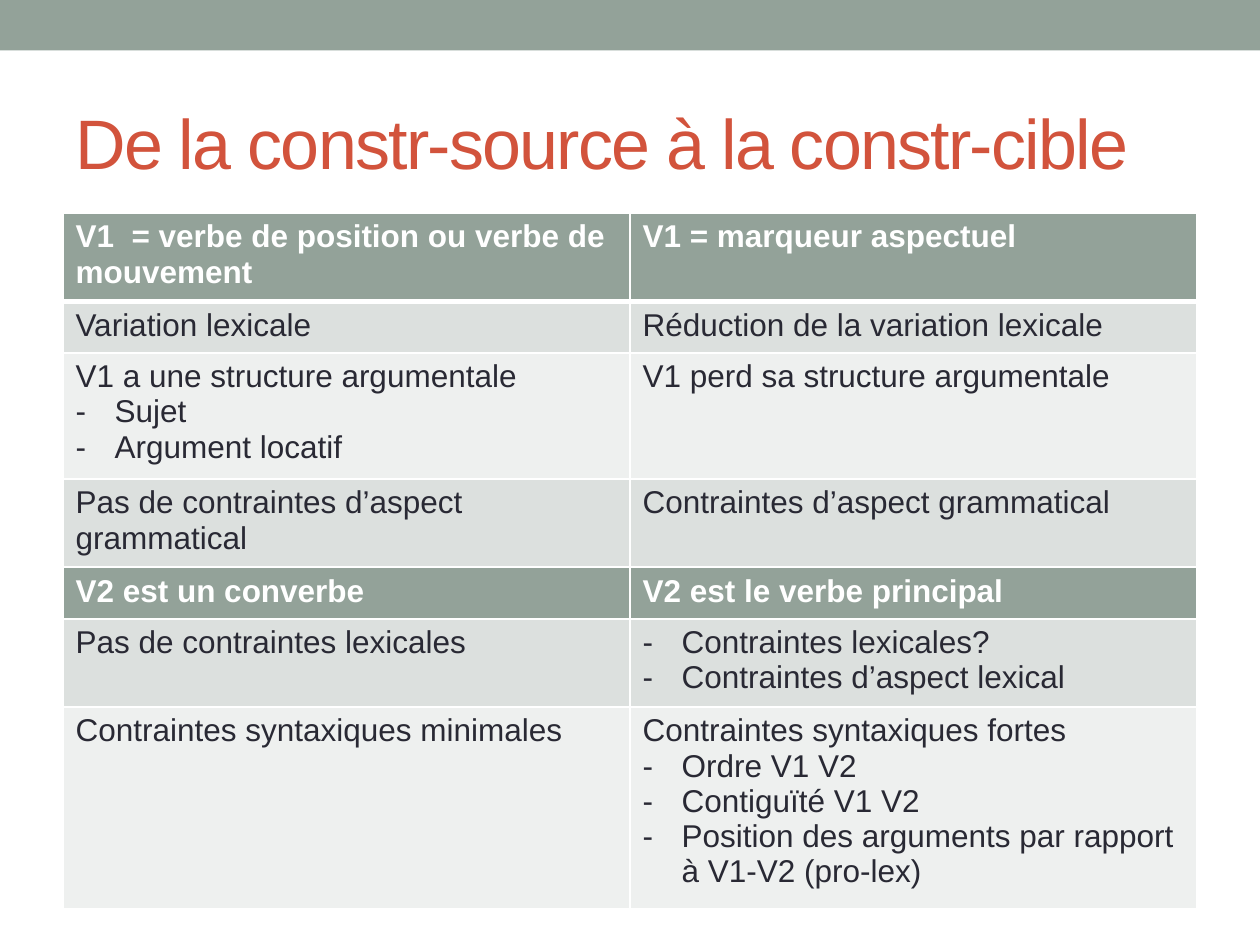
from dataclasses import dataclass

from lxml.etree import SubElement as Sub
from pptx import Presentation
from pptx.dml.color import RGBColor as Rgb
from pptx.enum.shapes import MSO_SHAPE as Shape
from pptx.enum.text import MSO_ANCHOR as Anchor
from pptx.oxml.ns import qn
from pptx.util import Inches, Pt

SAGE = Rgb(0x93, 0xA2, 0x99)
DARK = Rgb(0xDC, 0xE0, 0xDE)
PALE = Rgb(0xEE, 0xF0, 0xEF)
RUST = Rgb(0xD2, 0x53, 0x3C)
INK = Rgb(0x29, 0x29, 0x34)
WHITE = Rgb(0xFF, 0xFF, 0xFF)
FONT = "Arial"
DASH = "- "
WIDE, HIGH = Inches(10), Inches(7.5)
EDGE = WIDE // 20
SPAN = WIDE - 2 * EDGE


@dataclass
class Row:
    high: float
    fill: Rgb
    left: list[str]
    right: list[str]

    @property
    def head(self) -> bool:
        return self.fill == SAGE


ROWS = [
    Row(0.66, SAGE, ["V1  = verbe de position ou verbe de mouvement"],
        ["V1 = marqueur aspectuel"]),
    Row(0.41, DARK, ["Variation lexicale"],
        ["Réduction de la variation lexicale"]),
    Row(0.94, PALE,
        ["V1 a une structure argumentale", "- Sujet", "- Argument locatif"],
        ["V1 perd sa structure argumentale"]),
    Row(0.66, DARK, ["Pas de contraintes d’aspect grammatical"],
        ["Contraintes d’aspect grammatical"]),
    Row(0.41, SAGE, ["V2 est un converbe"], ["V2 est le verbe principal"]),
    Row(0.66, DARK, ["Pas de contraintes lexicales"],
        ["- Contraintes lexicales?", "- Contraintes d’aspect lexical"]),
    Row(1.5, PALE, ["Contraintes syntaxiques minimales"],
        ["Contraintes syntaxiques fortes", "- Ordre V1 V2", "- Contiguïté V1 V2",
         "- Position des arguments par rapport à V1-V2 (pro-lex)"]),
]


def style(para, size: float, tint: Rgb, bold: bool = False) -> None:
    for run in para.runs:
        font = run.font
        font.name, font.size, font.bold = FONT, Pt(size), bold
        font.color.rgb = tint


def bullet(para) -> None:
    props = para._p.get_or_add_pPr()
    props.set("marL", str(Inches(0.31)))
    props.set("indent", str(-Inches(0.31)))
    Sub(props, qn("a:buFont")).set("typeface", FONT)
    Sub(props, qn("a:buChar")).set("char", "-")


def border(cell, top: float, base: float) -> None:
    props = cell._tc.get_or_add_tcPr()
    sides = {"lnL": 1, "lnR": 1, "lnT": top, "lnB": base}
    for spot, (side, width) in enumerate(sides.items()):
        line = Sub(props, qn(f"a:{side}"), w=str(Pt(width)))
        fill = Sub(line, qn("a:solidFill"))
        Sub(fill, qn("a:srgbClr")).set("val", str(WHITE))
        props.insert(spot, line)


def write(cell, lines: list[str], row: Row) -> None:
    cell.fill.solid()
    cell.fill.fore_color.rgb = row.fill
    cell.text_frame.text = "\n".join(line.removeprefix(DASH) for line in lines)
    for para, line in zip(cell.text_frame.paragraphs, lines):
        style(para, 18, WHITE if row.head else INK, row.head)
        if line.startswith(DASH):
            bullet(para)


def band(slide) -> None:
    bar = slide.shapes.add_shape(Shape.RECTANGLE, 0, 0, WIDE, Inches(0.4))
    bar.shadow.inherit = False
    bar.fill.solid()
    bar.fill.fore_color.rgb = SAGE
    bar.line.fill.background()


def title(slide) -> None:
    box = slide.shapes.add_textbox(EDGE, Inches(0.58), SPAN, Inches(1.08))
    frame = box.text_frame
    frame.word_wrap = True
    frame.vertical_anchor = Anchor.MIDDLE
    frame.text = "De la constr-source à la constr-cible"
    para = frame.paragraphs[0]
    style(para, 40, RUST)
    para.runs[0].font._element.set("spc", "-100")


def grid(slide) -> None:
    high = Inches(sum(row.high for row in ROWS))
    table = slide.shapes.add_table(
        len(ROWS), 2, EDGE, Inches(1.69), SPAN, high).table
    table.first_row = table.horz_banding = False
    for spot, row in enumerate(ROWS):
        table.rows[spot].height = Inches(row.high)
        for col, lines in enumerate((row.left, row.right)):
            cell = table.cell(spot, col)
            write(cell, lines, row)
            border(cell, 3 if spot == 1 else 1, 3 if spot == 0 else 1)


def main() -> None:
    deck = Presentation()
    deck.slide_width, deck.slide_height = WIDE, HIGH
    slide = deck.slides.add_slide(deck.slide_layouts[6])
    band(slide)
    title(slide)
    grid(slide)
    deck.save("out.pptx")


if __name__ == "__main__":
    main()
